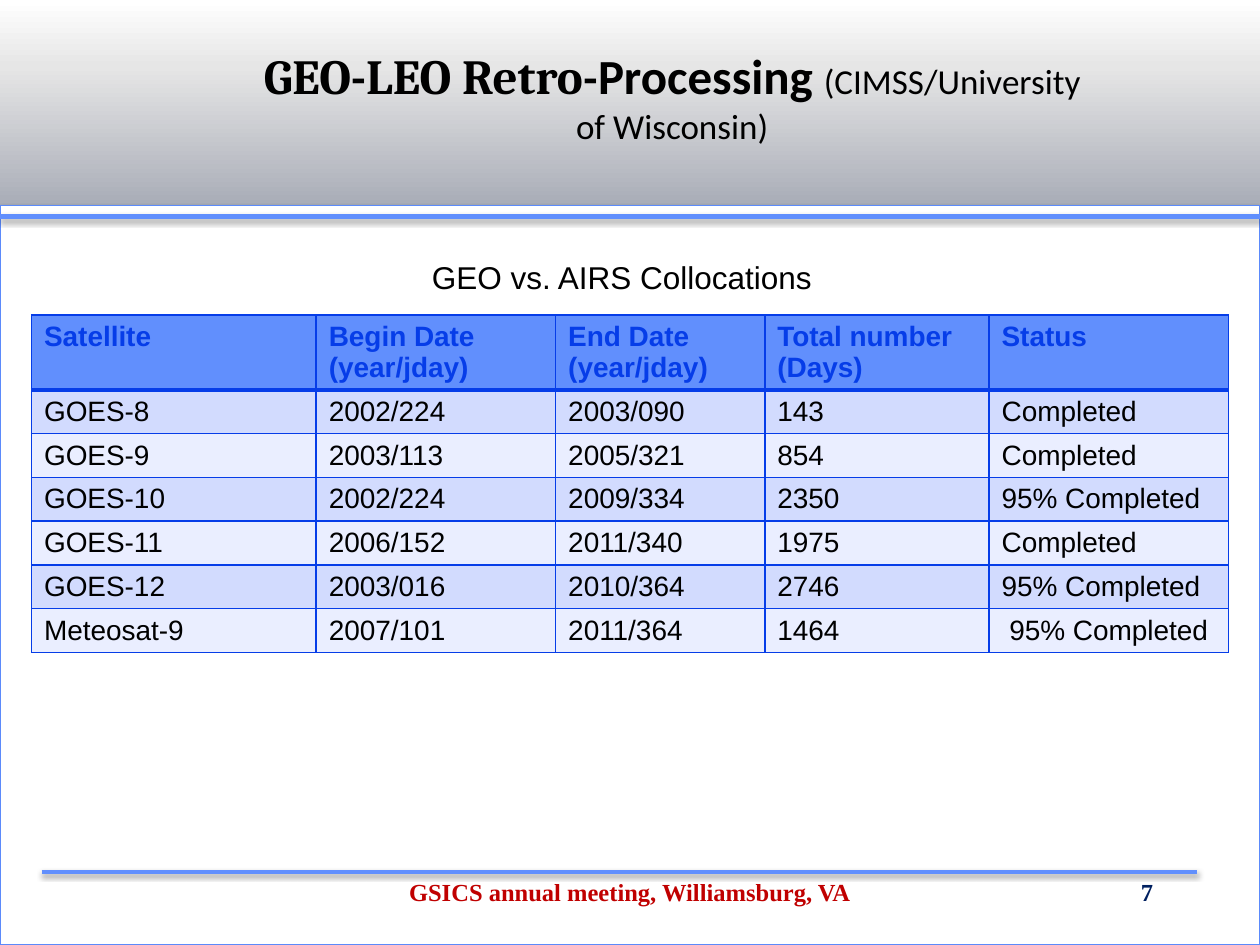
from lxml.etree import SubElement
from pptx import Presentation
from pptx.dml.color import RGBColor
from pptx.enum.shapes import MSO_CONNECTOR, MSO_SHAPE
from pptx.enum.text import MSO_ANCHOR, MSO_AUTO_SIZE, PP_ALIGN
from pptx.oxml.ns import qn
from pptx.util import Inches, Pt

BLACK = RGBColor(0x00, 0x00, 0x00)
WHITE = RGBColor(0xFF, 0xFF, 0xFF)
PANEL_EDGE = RGBColor(0x5B, 0x8A, 0xFB)
SKY = RGBColor(0x61, 0x8F, 0xFD)
BLUE = RGBColor(0x06, 0x3D, 0xE8)
BAND_DARK = RGBColor(0xD2, 0xDB, 0xFE)
BAND_LIGHT = RGBColor(0xEA, 0xEE, 0xFF)
NAVY = RGBColor(0x00, 0x20, 0x60)
RED = RGBColor(0xC0, 0x00, 0x00)
SILVER = RGBColor(0xE6, 0xE6, 0xE6)
SLATE = RGBColor(0x7D, 0x84, 0x96)


def add_shadow(shape, opacity, distance):
    """Give the shape a soft shadow straight below it; opacity in percent."""
    effects = SubElement(shape.element.spPr, qn("a:effectLst"))
    shadow = SubElement(effects, qn("a:outerShdw"), blurRad=str(Pt(3.1)),
                        dist=str(Pt(distance)), dir="5400000", rotWithShape="0")
    color = SubElement(shadow, qn("a:srgbClr"), val=str(BLACK))
    SubElement(color, qn("a:alpha"), val=str(opacity * 1000))


def add_run(paragraph, text, font_name, size, color, bold=False):
    run = paragraph.add_run()
    run.text = text
    run.font.name = font_name
    run.font.size = Pt(size)
    run.font.bold = bold
    run.font.color.rgb = color


prs = Presentation()
prs.slide_width = Inches(10)
prs.slide_height = Inches(7.5)
slide = prs.slides.add_slide(prs.slide_layouts[5])

# Background gradient, top to bottom
background = slide.background.fill
background.gradient()
background.gradient_angle = 270
stops = slide.element.find(".//" + qn("a:gsLst"))
for stop in list(stops):
    stops.remove(stop)
for percent, color in [(0, WHITE), (7, SILVER), (32, SLATE),
                       (47, SILVER), (85, SLATE), (100, SILVER)]:
    stop = SubElement(stops, qn("a:gs"), pos=str(percent * 1000))
    SubElement(stop, qn("a:srgbClr"), val=str(color))

# White content panel and the two rules
panel = slide.shapes.add_shape(MSO_SHAPE.RECTANGLE, Inches(0), Inches(1.63),
                               Inches(10), Inches(5.87))
panel.fill.solid()
panel.fill.fore_color.rgb = WHITE
panel.line.color.rgb = PANEL_EDGE
panel.line.width = Pt(0.75)
add_shadow(panel, 35, 1.8)

for left, right, y, width in [(0, 10, 1.72, 2.8), (0.33, 9.5, 6.92, 2)]:
    rule = slide.shapes.add_connector(MSO_CONNECTOR.STRAIGHT, Inches(left), Inches(y),
                                      Inches(right), Inches(y))
    rule.line.color.rgb = SKY
    rule.line.width = Pt(width)
    add_shadow(rule, 38, 1.6)

# Title
title = slide.shapes.title
title.left, title.top = Inches(1.92), Inches(0.25)
title.width, title.height = Inches(6.83), Inches(1.03)
title.text_frame.auto_size = MSO_AUTO_SIZE.NONE
title.text_frame.vertical_anchor = MSO_ANCHOR.MIDDLE
heading = title.text_frame.paragraphs[0]
heading.alignment = PP_ALIGN.CENTER
add_run(heading, "GEO-LEO Retro-", "Cambria", 28, BLACK, True)
add_run(heading, "Processing ", "Calibri", 28, BLACK, True)
add_run(heading, "(CIMSS/University of Wisconsin)", "Calibri", 20, BLACK)

# Collocation table
rows = [
    ("Satellite", "Begin Date\n(year/jday)", "End Date\n(year/jday)",
     "Total number (Days)", "Status"),
    ("GOES-8", "2002/224", "2003/090", "143", "Completed"),
    ("GOES-9", "2003/113", "2005/321", "854", "Completed"),
    ("GOES-10", "2002/224", "2009/334", "2350", "95% Completed"),
    ("GOES-11", "2006/152", "2011/340", "1975", "Completed"),
    ("GOES-12", "2003/016", "2010/364", "2746", "95% Completed"),
    ("Meteosat-9", "2007/101", "2011/364", "1464", " 95% Completed"),
]
column_widths = [2.26, 1.9, 1.66, 1.78, 1.9]
table = slide.shapes.add_table(len(rows), len(column_widths), Inches(0.25), Inches(2.5),
                               Inches(9.5), Inches(2.63)).table
for column, width in zip(table.columns, column_widths):
    column.width = Inches(width)

for r, values in enumerate(rows):
    is_header = r == 0
    table.rows[r].height = Inches(0.59 if is_header else 0.34)
    band = SKY if is_header else BAND_DARK if r % 2 else BAND_LIGHT
    for c, value in enumerate(values):
        cell = table.cell(r, c)
        for side in ("L", "R", "T", "B"):
            under_header = (r, side) in [(0, "B"), (1, "T")]
            border = SubElement(cell._tc.get_or_add_tcPr(), qn("a:ln" + side),
                                w=str(Pt(3 if under_header else 1)))
            border_fill = SubElement(border, qn("a:solidFill"))
            SubElement(border_fill, qn("a:srgbClr"), val=str(BLUE))
        cell.fill.solid()
        cell.fill.fore_color.rgb = band
        for i, line in enumerate(value.split("\n")):
            frame = cell.text_frame
            paragraph = frame.add_paragraph() if i else frame.paragraphs[0]
            add_run(paragraph, line, "Arial", 16, BLUE if is_header else BLACK, is_header)

# Table caption, page number and footer
labels = [
    ("GEO vs. AIRS Collocations", 3.33, 2, 3.25, 0.4, MSO_ANCHOR.TOP, PP_ALIGN.LEFT,
     "Arial", 18, BLACK, False),
    ("7", 7.17, 6.83, 2.08, 0.5, MSO_ANCHOR.MIDDLE, PP_ALIGN.RIGHT,
     "Times New Roman", 14, NAVY, True),
    ("GSICS annual meeting, Williamsburg, VA", 3, 6.83, 4, 0.5, MSO_ANCHOR.MIDDLE,
     PP_ALIGN.CENTER, "Times New Roman", 14, RED, True),
]
for text, left, top, width, height, anchor, alignment, *font in labels:
    label = slide.shapes.add_textbox(Inches(left), Inches(top), Inches(width), Inches(height))
    label.text_frame.word_wrap = False
    label.text_frame.vertical_anchor = anchor
    paragraph = label.text_frame.paragraphs[0]
    paragraph.alignment = alignment
    add_run(paragraph, text, *font)

prs.save("out.pptx")
